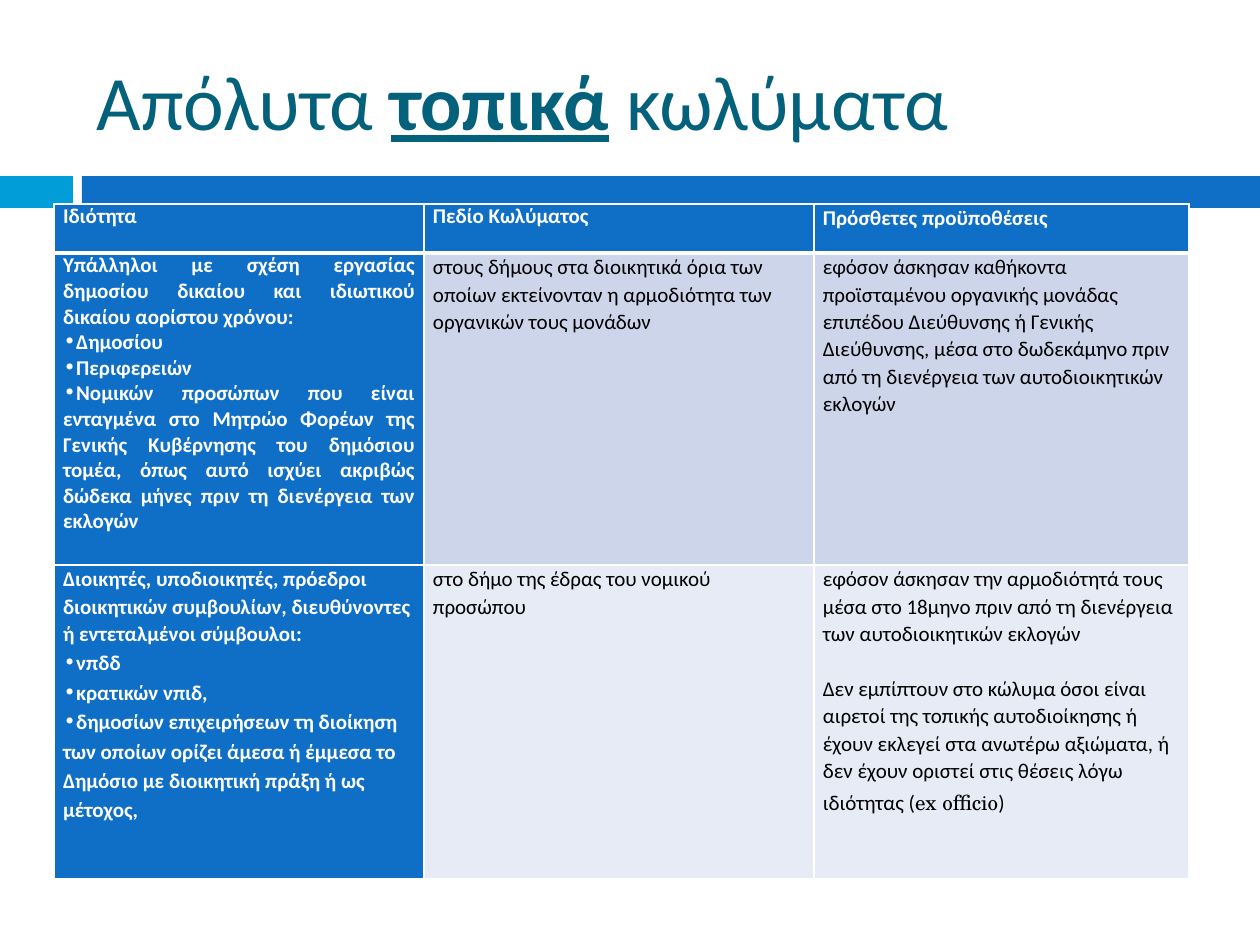
from lxml.etree import SubElement
from pptx import Presentation
from pptx.dml.color import RGBColor
from pptx.enum.shapes import MSO_SHAPE as Shape
from pptx.enum.text import MSO_ANCHOR as Anchor, PP_ALIGN as Align
from pptx.oxml.ns import qn
from pptx.util import Emu, Pt

PX = 914400 / 126
FONT = "Calibri"
LATIN_FONT = "TeX Gyre Schola"
COLORS = {
    "white": "FFFFFF",
    "black": "000000",
    "title": "04617B",
    "cyan": "009DD9",
    "blue": "0F6FC6",
    "band": "CCD5EA",
    "pale": "E7EBF5",
}
LOOSE = 1.07
COLUMN_WIDTHS = [370, 390, 375]
ROW_HEIGHTS = [49, 312, 314]

HEADERS = [
    [("Ιδιότητα", {"align": Align.JUSTIFY})],
    [("Πεδίο Κωλύματος", {"align": Align.JUSTIFY})],
    [("Πρόσθετες προϋποθέσεις", {"spacing": LOOSE})],
]
EMPLOYEES = [
    [
        ("Υπάλληλοι με σχέση εργασίας δημοσίου δικαίου και ιδιωτικού δικαίου αορίστου χρόνου:",
         {"align": Align.JUSTIFY}),
        *[(text, {"align": Align.JUSTIFY, "bullet": True}) for text in (
            "Δημοσίου",
            "Περιφερειών",
            "Νομικών προσώπων που είναι ενταγμένα στο Μητρώο Φορέων της Γενικής Κυβέρνησης "
            "του δημόσιου τομέα, όπως αυτό ισχύει ακριβώς δώδεκα μήνες πριν τη διενέργεια "
            "των εκλογών",
        )],
    ],
    [("στους δήμους στα διοικητικά όρια των οποίων εκτείνονταν η αρμοδιότητα των "
      "οργανικών τους μονάδων", {"spacing": LOOSE})],
    [("εφόσον άσκησαν καθήκοντα προϊσταμένου οργανικής μονάδας επιπέδου Διεύθυνσης ή "
      "Γενικής Διεύθυνσης, μέσα στο δωδεκάμηνο πριν από τη διενέργεια των "
      "αυτοδιοικητικών εκλογών", {"spacing": LOOSE})],
]
DIRECTORS = [
    [
        ("Διοικητές, υποδιοικητές, πρόεδροι διοικητικών συμβουλίων, διευθύνοντες ή "
         "εντεταλμένοι σύμβουλοι:", {"spacing": LOOSE}),
        *[(text, {"spacing": 1.15, "bullet": True}) for text in (
            "νπδδ",
            "κρατικών νπιδ,",
            "δημοσίων επιχειρήσεων τη διοίκηση των οποίων ορίζει άμεσα ή έμμεσα το Δημόσιο "
            "με διοικητική πράξη ή ως μέτοχος,",
        )],
    ],
    [("στο δήμο της έδρας του νομικού προσώπου", {"spacing": LOOSE})],
    [
        ("εφόσον άσκησαν την αρμοδιότητά τους μέσα στο 18μηνο πριν από τη διενέργεια των "
         "αυτοδιοικητικών εκλογών", {"spacing": LOOSE}),
        ([("Δεν εμπίπτουν στο κώλυμα όσοι είναι αιρετοί της τοπικής αυτοδιοίκησης ή έχουν "
           "εκλεγεί στα ανωτέρω αξιώματα, ή δεν έχουν οριστεί στις θέσεις λόγω ιδιότητας (", {}),
          ("ex officio", {"font": LATIN_FONT}),
          (")", {})], {"spacing": LOOSE, "before": 15.7}),
    ],
]


def px(length):
    return Emu(round(length * PX))


def color(name):
    return RGBColor.from_string(COLORS[name])


def add_run(paragraph, text, size=12, ink="black", bold=False, underline=False, font=FONT):
    run = paragraph.add_run()
    run.text = text
    run.font.name = font
    run.font.size = Pt(size)
    run.font.bold = bold
    run.font.underline = underline
    run.font.color.rgb = color(ink)


def add_bullet(paragraph):
    properties = paragraph._p.get_or_add_pPr()
    properties.set("marL", "0")
    properties.set("indent", str(-px(10)))
    bullet_color = SubElement(properties, qn("a:buClr"))
    SubElement(bullet_color, qn("a:srgbClr"), val=COLORS["white"])
    SubElement(properties, qn("a:buChar"), char="∙")


def write_paragraph(paragraph, text, align=Align.LEFT, spacing=1.0, before=0,
                    bullet=False, **run_format):
    paragraph.alignment = align
    paragraph.line_spacing = spacing
    paragraph.space_before = Pt(before)
    if bullet:
        add_bullet(paragraph)
    runs = [(text, {})] if isinstance(text, str) else text
    for part, part_format in runs:
        add_run(paragraph, part, **{**run_format, **part_format})


def set_borders(cell, **widths):
    properties = cell._tc.get_or_add_tcPr()
    for side in "LRTB":
        line = SubElement(properties, qn(f"a:ln{side}"), w=str(Pt(widths.get(side, 1))))
        fill = SubElement(line, qn("a:solidFill"))
        SubElement(fill, qn("a:srgbClr"), val=COLORS["white"])


def fill_cell(cell, paragraphs, fill, **run_format):
    cell.margin_left = cell.margin_right = px(9)
    cell.margin_top = cell.margin_bottom = 0
    cell.fill.solid()
    cell.fill.fore_color.rgb = color(fill)
    frame = cell.text_frame
    for index, (text, paragraph_format) in enumerate(paragraphs):
        paragraph = frame.add_paragraph() if index else frame.paragraphs[0]
        write_paragraph(paragraph, text, **paragraph_format, **run_format)


def add_bar(slide, left, top, width, height, fill):
    shape = slide.shapes.add_shape(Shape.RECTANGLE, px(left), px(top), px(width), px(height))
    shape.shadow.inherit = False
    shape.fill.solid()
    shape.fill.fore_color.rgb = color(fill)
    shape.line.fill.background()


def add_band(slide, left, top, width, height):
    accent, gap = 73, 9
    add_bar(slide, left, top, accent, height, "cyan")
    add_bar(slide, left + accent + gap, top, width - accent - gap, height, "blue")


def add_title(slide, left, top, width, height):
    title = slide.shapes.title
    title.left, title.top, title.width, title.height = map(px, (left, top, width, height))
    title.text_frame.vertical_anchor = Anchor.MIDDLE
    runs = [("Απόλυτα ", {}), ("τοπικά", {"bold": True, "underline": True}), (" κωλύματα", {})]
    write_paragraph(title.text_frame.paragraphs[0], runs, size=44, ink="title")


def add_rules_table(slide, left, top):
    rows = [HEADERS, EMPLOYEES, DIRECTORS]
    table = slide.shapes.add_table(
        len(rows), len(COLUMN_WIDTHS), px(left), px(top),
        px(sum(COLUMN_WIDTHS)), px(sum(ROW_HEIGHTS))).table
    for column, width in zip(table.columns, COLUMN_WIDTHS):
        column.width = px(width)
    for row, height in zip(table.rows, ROW_HEIGHTS):
        row.height = px(height)
    heavy_sides = [{"B": 3}, {"T": 3}, {}]
    for row_index, (row, body_fill) in enumerate(zip(rows, ["blue", "band", "pale"])):
        for column_index, paragraphs in enumerate(row):
            cell = table.cell(row_index, column_index)
            heading = row_index == 0 or column_index == 0
            set_borders(cell, **heavy_sides[row_index])
            fill_cell(cell, paragraphs, "blue" if heading else body_fill,
                      ink="white" if heading else "black", bold=heading)


def main():
    presentation = Presentation()
    presentation.slide_width, presentation.slide_height = px(1260), px(945)
    slide = presentation.slides.add_slide(presentation.slide_layouts[5])
    add_band(slide, 0, 176, 1260, 32)
    add_title(slide, 84, 32, 1124, 136)
    add_rules_table(slide, 54, 204)
    presentation.save("out.pptx")


if __name__ == "__main__":
    main()
